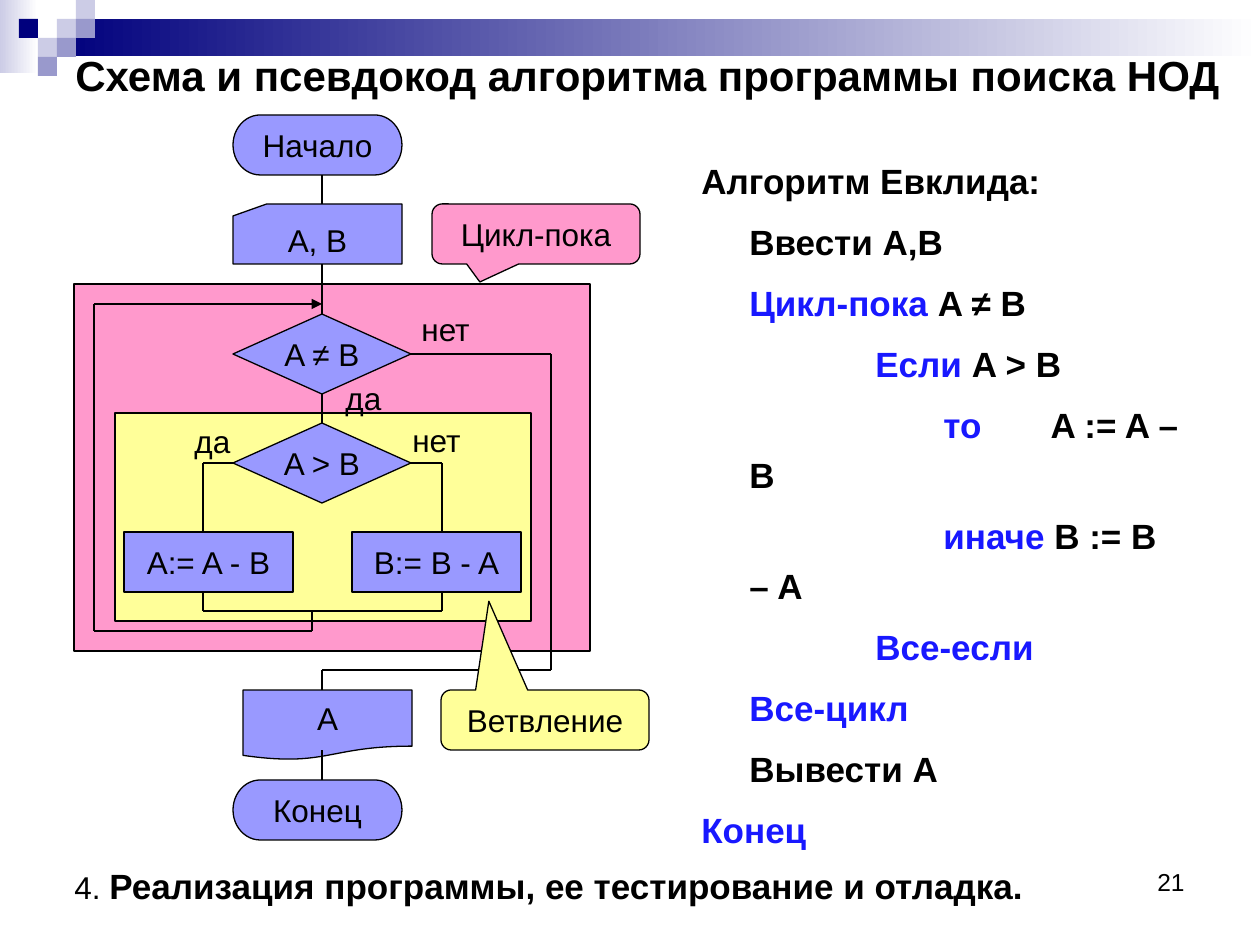
"""Build a slide with a flowchart and pseudocode of the GCD algorithm."""
from dataclasses import dataclass
from itertools import pairwise

from lxml import etree
from pptx import Presentation
from pptx import util as u
from pptx.dml.color import RGBColor
from pptx.enum import shapes, text
from pptx.oxml.ns import qn

PX = u.Inches(1) / 126
SHAPE = shapes.MSO_SHAPE
ALIGN = text.PP_ALIGN
ANCHOR = text.MSO_ANCHOR
TOP, LEFT, BOTTOM, RIGHT = range(4)


@dataclass(frozen=True)
class Theme:
    """Hold the colours and type sizes of the slide."""
    font: str = "Arial"
    ink: str = "000000"
    paper: str = "FFFFFF"
    keyword: str = "1818FF"
    block: str = "9999FF"
    loop: str = "FF99CC"
    branch: str = "FFFF99"
    navy: str = "00007D"
    pale: str = "CCCCE6"
    mid: str = "9999CC"
    title: int = 24
    code: int = 20
    label: int = 18
    number: int = 14
    line: float = 0.75


THEME = Theme()


def px(length):
    """Turn pixels into EMU."""
    return u.Emu(round(length * PX))


def colour(value):
    """Turn a hex string into a colour."""
    return RGBColor.from_string(value)


def write(box, paragraphs, size=THEME.label, bold=False, align=ALIGN.LEFT,
          anchor=ANCHOR.TOP, wrap=True):
    """Fill a box with paragraphs and return them; a span is a string or (string, format)."""
    frame = box.text_frame
    frame.word_wrap = wrap
    frame.vertical_anchor = anchor
    for index, spans in enumerate(paragraphs):
        para = frame.paragraphs[0] if index == 0 else frame.add_paragraph()
        para.alignment = align
        for item in spans:
            words, look = (item, {}) if isinstance(item, str) else item
            span = para.add_run()
            span.text = words
            span.font.name = THEME.font
            span.font.size = u.Pt(look.get("size", size))
            span.font.bold = look.get("bold", bold)
            span.font.color.rgb = colour(look.get("color", THEME.ink))
            if "spacing" in look:
                span._r.get_or_add_rPr().set("spc", str(look["spacing"] * 100))
    return frame.paragraphs


def add_text(page, area, paragraphs, **look):
    """Add a text box and return its paragraphs."""
    return write(page.shapes.add_textbox(*map(px, area)), paragraphs, **look)


def add_block(page, kind, area, fill, words="", outlined=True, wrap=False, adjust=()):
    """Add a preset shape with an optional centred caption."""
    block = page.shapes.add_shape(kind, *map(px, area))
    block.shadow.inherit = False
    for index, value in enumerate(adjust):
        block.adjustments[index] = value
    block.fill.solid()
    block.fill.fore_color.rgb = colour(fill)
    if outlined:
        block.line.color.rgb = colour(THEME.ink)
        block.line.width = u.Pt(THEME.line)
    else:
        block.line.fill.background()
    if words:
        write(block, [[words]], align=ALIGN.CENTER, anchor=ANCHOR.MIDDLE, wrap=wrap)
    return block


def add_fade(page, area, start):
    """Add a band that fades from a colour to the paper."""
    band = add_block(page, SHAPE.RECTANGLE, area, start, outlined=False)
    band.fill.gradient()
    band.fill.gradient_angle = 0
    for stop, value in zip(band.fill.gradient_stops, (start, THEME.paper)):
        stop.color.rgb = colour(value)


def add_route(page, points, begin=None, end=None, arrow=False):
    """Draw straight segments through the points, joined to blocks at the ends."""
    for start, finish in pairwise(points):
        segment = page.shapes.add_connector(
            shapes.MSO_CONNECTOR.STRAIGHT, *map(px, (*start, *finish)))
        segment.line.color.rgb = colour(THEME.ink)
        segment.line.width = u.Pt(THEME.line)
        etree.SubElement(segment._element.spPr, qn("a:effectLst"))
        if begin and start == points[0]:
            segment.begin_connect(*begin)
    if end:
        segment.end_connect(*end)
    if arrow:
        etree.SubElement(segment.line._get_or_add_ln(), qn("a:tailEnd"), type="triangle")


def add_header(page):
    """Draw the fading bands and the mosaic of squares."""
    add_fade(page, (0, 0, 38, 73), THEME.pale)
    add_fade(page, (57, 19, 1203, 37), THEME.navy)
    mosaic = ((3, 1, THEME.pale), (4, 0, THEME.pale), (4, 1, THEME.mid), (2, 2, THEME.pale),
              (1, 1, THEME.navy), (3, 2, THEME.mid), (2, 3, THEME.mid))
    for column, row, fill in mosaic:
        add_block(page, SHAPE.RECTANGLE, (column * 19, row * 19, 19, 19), fill, outlined=False)


def add_code(page):
    """Write the pseudocode with its first-line indents."""
    key = {"color": THEME.keyword}
    lines = (
        (0, ["Алгоритм Евклида:"]),
        (48, ["Ввести A,B"]),
        (48, [("Цикл-пока ", key), "A ≠ B"]),
        (174, [("Если ", key), "A > B"]),
        (242, [("то", key), (" ", {"spacing": 34}), "A := A – B"]),
        (242, [("иначе ", key), "B := B – A"]),
        (174, [("Все-если", key)]),
        (48, [("Все-цикл", key)]),
        (48, ["Вывести A"]),
        (0, [("Конец", key)]),
    )
    paragraphs = add_text(page, (689, 145, 507, 665), [spans for _, spans in lines],
                          size=THEME.code, bold=True)
    for para, (start, _) in zip(paragraphs, lines):
        para.line_spacing = 1.2
        para.space_before = u.Pt(6)
        properties = para._p.get_or_add_pPr()
        properties.set("marL", str(px(48)))
        properties.set("indent", str(px(start - 48)))


def add_flowchart(page):
    """Draw the blocks, routes and answers of the algorithm."""
    add_block(page, SHAPE.RECTANGLE, (74, 284, 516, 367), THEME.loop)
    add_block(page, SHAPE.RECTANGLE, (115, 413, 416, 208), THEME.branch)
    for kind, left, top, words in (
            (SHAPE.FLOWCHART_TERMINATOR, 233, 115, "Начало"),
            (SHAPE.FLOWCHART_TERMINATOR, 233, 780, "Конец"),
            (SHAPE.FLOWCHART_CARD, 233, 204, "A, B"),
            (SHAPE.RECTANGLE, 124, 532, "A:= A - B"),
            (SHAPE.RECTANGLE, 352, 532, "B:= B - A")):
        add_block(page, kind, (left, top, 169, 60), THEME.block, words)
    differ, greater = (add_block(page, SHAPE.DIAMOND, (233, top, 178, 80), THEME.block, words)
                       for top, words in ((314, "A ≠ B"), (423, "A > B")))

    axis = 322
    add_route(page, [(axis, 175), (axis, 204)])
    add_route(page, [(axis, 264), (axis, 314)], end=(differ, TOP))
    add_route(page, [(axis, 394), (axis, 423)], begin=(differ, BOTTOM), end=(greater, TOP))
    add_route(page, [(411, 463), (442, 463), (442, 532)], begin=(greater, RIGHT))
    add_route(page, [(233, 463), (203, 463), (203, 532)], begin=(greater, LEFT))
    add_route(page, [(203, 592), (203, 611), (442, 611), (442, 592)])
    add_route(page, [(312, 611), (312, 631), (94, 631), (94, 304), (axis, 304)], arrow=True)
    add_route(page, [(411, 354), (551, 354), (551, 670), (axis, 670), (axis, 700)],
              begin=(differ, RIGHT))

    for left, top, words in ((409, 304, "нет"), (182, 416, "да"),
                             (400, 415, "нет"), (333, 373, "да")):
        add_text(page, (left, top, 85, 50), [[words]])
    add_block(page, SHAPE.FLOWCHART_DOCUMENT, (243, 690, 169, 70), THEME.block, "A")
    add_route(page, [(axis, 780), (axis, 750)])
    for left, top, fill, words, tip in (
            (432, 204, THEME.loop, "Цикл-пока", (-0.27, 0.8)),
            (441, 690, THEME.branch, "Ветвление", (-0.27, -1.98))):
        add_block(page, SHAPE.ROUNDED_RECTANGULAR_CALLOUT, (left, top, 208, 60), fill, words,
                  wrap=True, adjust=(*tip, 0.17))


def main():
    """Build and save the deck."""
    deck = Presentation()
    deck.slide_width, deck.slide_height = px(1260), px(945)
    page = deck.slides.add_slide(deck.slide_layouts[6])
    add_header(page)
    add_text(page, (63, 45, 1197, 59), [["Схема и псевдокод алгоритма программы поиска НОД"]],
             size=THEME.title, bold=True, anchor=ANCHOR.MIDDLE)
    add_code(page)
    add_flowchart(page)
    add_text(page, (62, 858, 1014, 54),
             [["4. ", ("Реализация программы, ее тестирование и отладка.",
                       {"size": THEME.code, "bold": True})]])
    add_text(page, (903, 861, 294, 65), [["21"]], size=THEME.number, align=ALIGN.RIGHT)
    deck.save("out.pptx")


if __name__ == "__main__":
    main()
